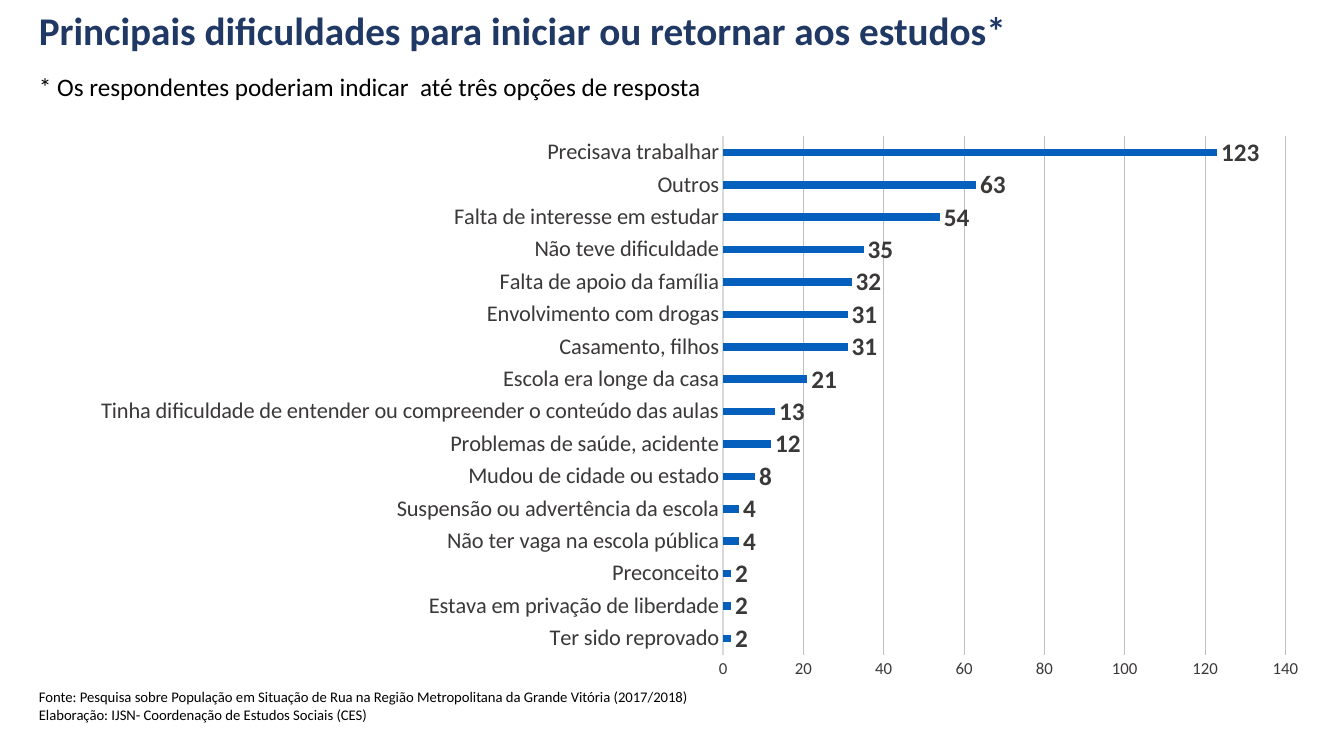
from dataclasses import dataclass

from lxml import etree
from pptx import Presentation
from pptx.chart.data import CategoryChartData
from pptx.dml.color import RGBColor
from pptx.enum.chart import XL_CHART_TYPE, XL_LABEL_POSITION, XL_TICK_MARK
from pptx.enum.text import MSO_ANCHOR, MSO_AUTO_SIZE
from pptx.oxml.ns import qn
from pptx.util import Emu, Pt

SCALE = 914400 / 100.8
FONT = "Calibri"
BLACK, NAVY, BLUE, DARK = "000000", "203864", "055FBC", "3B3838"
AXIS, GRID = "D9D9D9", "BFBFBF"


@dataclass
class Box:
    x: int
    y: int
    w: int
    h: int

    def emu(self) -> tuple:
        return tuple(px(n) for n in (self.x, self.y, self.w, self.h))


@dataclass
class Text:
    box: Box
    lines: list
    size: float
    ink: str = BLACK
    bold: bool = False
    anchor: MSO_ANCHOR = MSO_ANCHOR.TOP
    spacing: float = 1.0
    fit: MSO_AUTO_SIZE = MSO_AUTO_SIZE.NONE


TEXTS = [
    Text(Box(29, 3, 1282, 62),
         ["Principais dificuldades para iniciar ou retornar aos estudos*"],
         28, NAVY, True, MSO_ANCHOR.MIDDLE, 0.8),
    Text(Box(29, 66, 1236, 40),
         ["* Os respondentes poderiam indicar  até três opções de resposta"],
         18, fit=MSO_AUTO_SIZE.SHAPE_TO_FIT_TEXT),
    Text(Box(29, 669, 1282, 59),
         ["Fonte: Pesquisa sobre População em Situação de Rua na Região "
          "Metropolitana da Grande Vitória (2017/2018)",
          "Elaboração: IJSN- Coordenação de Estudos Sociais (CES)"],
         10.5, anchor=MSO_ANCHOR.BOTTOM),
]

# Listed from the bottom bar up
REASONS = {
    "Ter sido reprovado": 2,
    "Estava em privação de liberdade": 2,
    "Preconceito": 2,
    "Não ter vaga na escola pública": 4,
    "Suspensão ou advertência da escola": 4,
    "Mudou de cidade ou estado": 8,
    "Problemas de saúde, acidente": 12,
    "Tinha dificuldade de entender ou compreender o conteúdo das aulas": 13,
    "Escola era longe da casa": 21,
    "Casamento, filhos": 31,
    "Envolvimento com drogas": 31,
    "Falta de apoio da família": 32,
    "Não teve dificuldade": 35,
    "Falta de interesse em estudar": 54,
    "Outros": 63,
    "Precisava trabalhar": 123,
}
CHART = Box(33, 119, 1278, 576)
PLOT = {"x": 0.54, "y": 0.03, "w": 0.44, "h": 0.9}


def px(n: int) -> Emu:
    return Emu(round(n * SCALE))


def color(code: str) -> RGBColor:
    return RGBColor.from_string(code)


def style(font, size: float, ink: str, bold: bool = False) -> None:
    font.name = FONT
    font.size = Pt(size)
    font.bold = bold
    font.color.rgb = color(ink)


def stroke(line, ink: str, width: float) -> None:
    line.color.rgb = color(ink)
    line.width = Pt(width)


def add_text(slide, item: Text) -> None:
    frame = slide.shapes.add_textbox(*item.box.emu()).text_frame
    frame.word_wrap = True
    frame.auto_size = item.fit
    frame.vertical_anchor = item.anchor
    for i, words in enumerate(item.lines):
        para = frame.add_paragraph() if i else frame.paragraphs[0]
        para.line_spacing = item.spacing
        run = para.add_run()
        run.text = words
        style(run.font, item.size, item.ink, item.bold)


def place_plot(chart) -> None:
    """Fix the inner plot area as fractions of the chart."""
    area = chart._chartSpace.find(".//" + qn("c:plotArea"))
    for old in area.findall(qn("c:layout")):
        area.remove(old)
    layout = etree.Element(qn("c:layout"))
    area.insert(0, layout)
    manual = etree.SubElement(layout, qn("c:manualLayout"))
    rules = {"layoutTarget": "inner", "xMode": "edge", "yMode": "edge", **PLOT}
    for tag, val in rules.items():
        etree.SubElement(manual, qn("c:" + tag)).set("val", str(val))


def add_bars(slide) -> None:
    data = CategoryChartData()
    data.categories = list(REASONS)
    data.add_series("Respostas", list(REASONS.values()))
    chart = slide.shapes.add_chart(
        XL_CHART_TYPE.BAR_CLUSTERED, *CHART.emu(), data).chart
    chart.has_legend = chart.has_title = False
    style(chart.font, 10, BLACK)
    place_plot(chart)

    cats, vals = chart.category_axis, chart.value_axis
    for axis, size in ((cats, 16), (vals, 12)):
        axis.major_tick_mark = axis.minor_tick_mark = XL_TICK_MARK.NONE
        style(axis.tick_labels.font, size, DARK)
    stroke(cats.format.line, AXIS, 1.5)
    vals.format.line.fill.background()
    vals.minimum_scale, vals.maximum_scale, vals.major_unit = 0, 140, 20
    vals.has_major_gridlines = True
    stroke(vals.major_gridlines.format.line, GRID, 0.75)

    plot = chart.plots[0]
    plot.vary_by_categories = False
    plot.gap_width, plot.overlap = 326, -58
    fill = plot.series[0].format.fill
    fill.solid()
    fill.fore_color.rgb = color(BLUE)
    labels = plot.series[0].data_labels
    labels.show_value = True
    labels.position = XL_LABEL_POSITION.OUTSIDE_END
    style(labels.font, 18, DARK, True)


def main() -> None:
    deck = Presentation()
    deck.slide_width, deck.slide_height = px(1344), px(756)
    slide = deck.slides.add_slide(deck.slide_layouts[6])
    add_bars(slide)
    for item in TEXTS:
        add_text(slide, item)
    deck.save("out.pptx")


if __name__ == "__main__":
    main()
